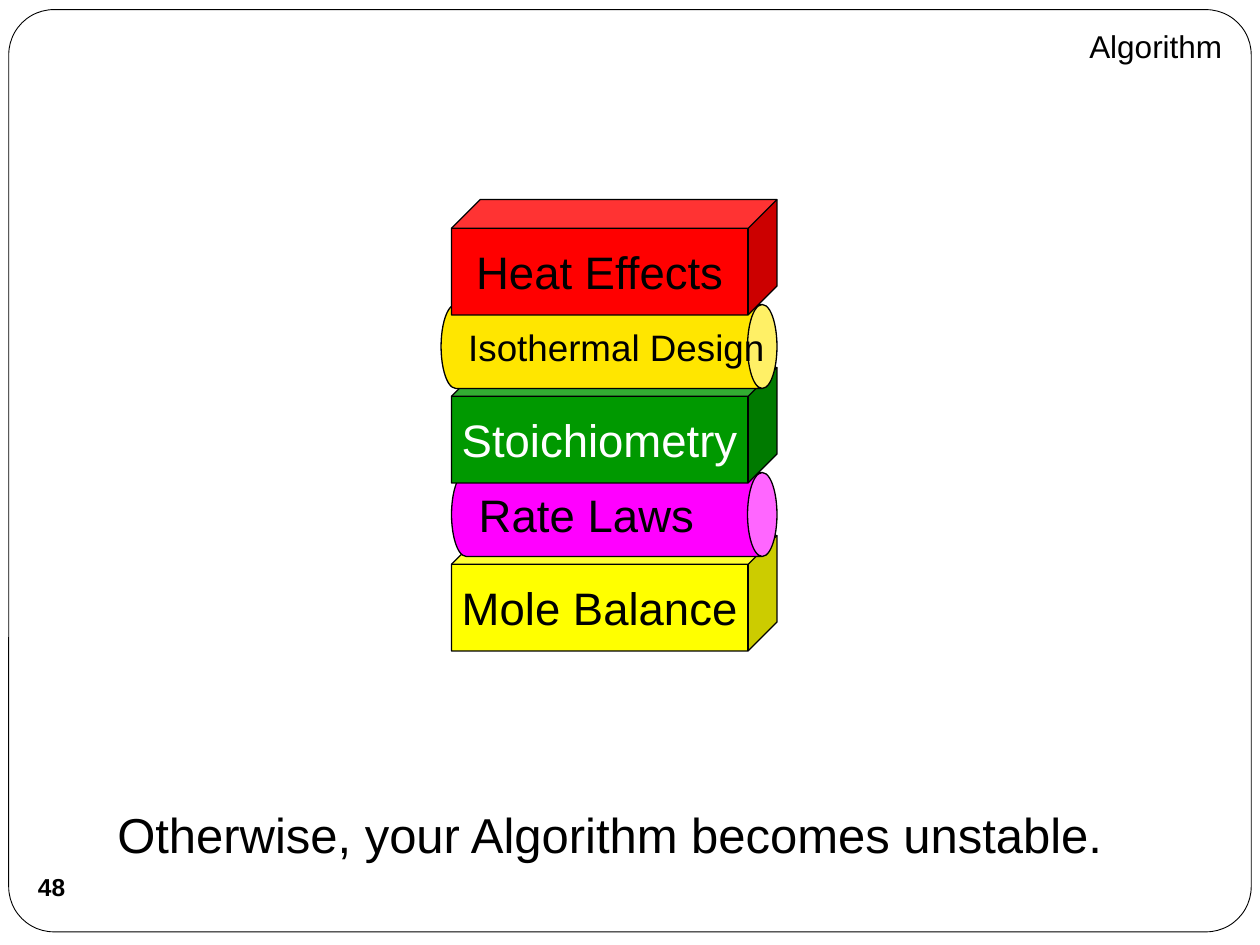
import pptx
import pptx.dml.color
import pptx.enum.shapes
import pptx.enum.text
import pptx.util

Pt = pptx.util.Pt
RGBColor = pptx.dml.color.RGBColor
SHAPE = pptx.enum.shapes.MSO_SHAPE
ALIGN = pptx.enum.text.PP_ALIGN
MIDDLE = pptx.enum.text.MSO_ANCHOR.MIDDLE

BLACK = RGBColor(0x00, 0x00, 0x00)
WHITE = RGBColor(0xFF, 0xFF, 0xFF)
YELLOW = RGBColor(0xFF, 0xFF, 0x00)
MAGENTA = RGBColor(0xFF, 0x00, 0xFF)
GREEN = RGBColor(0x00, 0x99, 0x00)
GOLD = RGBColor(0xFF, 0xE6, 0x00)
RED = RGBColor(0xFF, 0x00, 0x00)

STACK_STEP = 96
CUBE_HEIGHT = 66
CAN_HEIGHT = 48
CAN_RISE = 36  # how far a can's top lies above the top of the cube below it

# Bottom to top: kind, label, fill, text colour, text size, overhang on the left
LAYERS = [
    ("cube", "Mole Balance", YELLOW, BLACK, 26, 0),
    ("can", "Rate Laws", MAGENTA, BLACK, 26, 0),
    ("cube", "Stoichiometry", GREEN, WHITE, 26, 0),
    ("can", "Isothermal Design", GOLD, BLACK, 21, 6),
    ("cube", "Heat Effects", RED, BLACK, 26, 0),
]


def set_attributes(target, values):
    for name, value in values.items():
        setattr(target, name, value)


def write_text(shape, text, size, color=BLACK, alignment=ALIGN.CENTER, bold=False, **frame_format):
    frame = shape.text_frame
    set_attributes(frame, frame_format)
    paragraph = frame.paragraphs[0]
    paragraph.alignment = alignment
    run = paragraph.add_run()
    run.text = text
    set_attributes(run.font, {"name": "Arial", "size": Pt(size), "bold": bold})
    run.font.color.rgb = color


def add_solid(slide, kind, box, fill, line_width, adjustment):
    shape = slide.shapes.add_shape(kind, *map(Pt, box))
    shape.shadow.inherit = False
    shape.adjustments[0] = adjustment
    shape.fill.solid()
    shape.fill.fore_color.rgb = fill
    shape.line.color.rgb = BLACK
    shape.line.width = Pt(line_width)
    return shape


def add_cube(slide, box, fill):
    return add_solid(slide, SHAPE.CUBE, box, fill, 0.75, 0.25)


def add_lying_can(slide, box, fill):
    """Fill the box with a can turned on its side whose text stays upright."""
    left, top, width, height = box
    shift = (width - height) / 2
    can = add_solid(slide, SHAPE.CAN, (left + shift, top - shift, height, width), fill, 0.75, 0.351)
    can.rotation = 90
    body = can.element.txBody.bodyPr
    body.set("vert", "eaVert")
    body.set("rot", "10800000")
    return can


def add_stack(slide, box):
    """Pile the layers upwards, each one overlapping the layer below."""
    left, top, width, height = box
    cube_top = top + height - CUBE_HEIGHT
    for index, (kind, label, fill, color, size, overhang) in enumerate(LAYERS):
        base_top = cube_top - index // 2 * STACK_STEP
        if kind == "cube":
            layer = add_cube(slide, (left, base_top, width, CUBE_HEIGHT), fill)
        else:
            can_box = (left - overhang, base_top - CAN_RISE, width + overhang, CAN_HEIGHT)
            layer = add_lying_can(slide, can_box, fill)
        write_text(layer, label, size, color, word_wrap=False, vertical_anchor=MIDDLE)


def add_slide_number(slide, box, number):
    badge = slide.shapes.add_shape(SHAPE.OVAL, *map(Pt, box))
    badge.shadow.inherit = False
    badge.fill.background()
    badge.line.fill.background()
    write_text(badge, number, 14, bold=True, word_wrap=False, vertical_anchor=MIDDLE,
               margin_left=0, margin_top=0, margin_right=0, margin_bottom=0)


def add_text(slide, box, text, size, alignment):
    text_box = slide.shapes.add_textbox(*map(Pt, box))
    write_text(text_box, text, size, alignment=alignment, word_wrap=True)


def main():
    presentation = pptx.Presentation()
    set_attributes(presentation, {"slide_width": Pt(720), "slide_height": Pt(540)})
    slide = presentation.slides.add_slide(presentation.slide_layouts[6])

    add_solid(slide, SHAPE.ROUNDED_RECTANGLE, (5, 5.5, 710, 527), WHITE, 0.5, 0.049)
    add_stack(slide, (258, 114, 186, 258))
    add_slide_number(slide, (11.5, 489, 36, 36), "48")
    add_text(slide, (60, 456, 654, 75), "Otherwise, your Algorithm becomes unstable.", 28, ALIGN.LEFT)
    add_text(slide, (507, 12, 198.5, 29), "Algorithm", 18, ALIGN.RIGHT)

    presentation.save("out.pptx")


if __name__ == "__main__":
    main()
